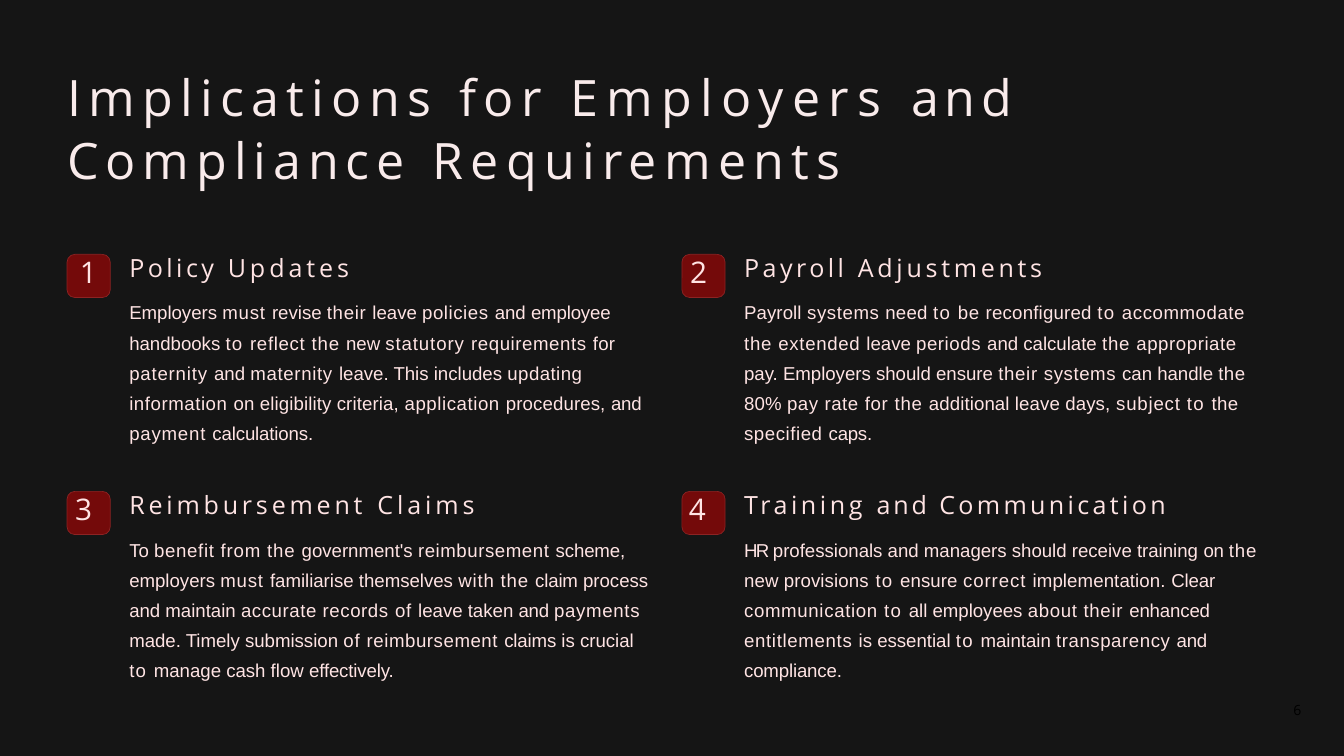
from pptx import Presentation
from pptx.dml.color import RGBColor
from pptx.enum.shapes import MSO_SHAPE
from pptx.enum.text import PP_ALIGN
from pptx.util import Pt

ROUNDED_RECTANGLE = MSO_SHAPE.ROUNDED_RECTANGLE
ALIGN_RIGHT = PP_ALIGN.RIGHT

BACKGROUND = RGBColor(0x15, 0x15, 0x15)
TITLE_COLOR = RGBColor(0xF9, 0xEB, 0xEB)
TEXT_COLOR = RGBColor(0xFF, 0xE4, 0xE4)
BADGE_FILL = RGBColor(0x74, 0x0A, 0x0A)
BADGE_LINE = RGBColor(0x8D, 0x23, 0x23)
BLACK = RGBColor(0, 0, 0)

HEADING_FONT = "Open Sans"
BODY_FONT = "Arial"

GRID_LEFT, GRID_TOP = 57.5, 218
COLUMN_STEP, ROW_STEP = 527, 203.2
BADGE_SIZE = 37
TOPIC_INDENT = 53.3
TOPIC_WIDTH, TOPIC_HEIGHT = 450, 167

# Every run is (text, letter spacing in points).
TITLE = [
    ("Implications ", 6.3), ("for ", 6.6), ("Employers ", 7.1), ("and ", 4.8),
    ("Compliance ", 6), ("Requirements", 6.3),
]

# Every topic is (offset of its number inside the badge, heading, body).
TOPICS = [
    (
        11,
        [("Policy ", 3), ("Updates", 3.4)],
        [
            ("Employers ", 0), ("must ", 0.7), ("revise ", 0), ("their ", 0.6),
            ("leave ", 0), ("policies ", 0.5), ("and ", 0), ("employee ", -0.1),
            ("handbooks ", 0), ("to ", 1.1), ("reflect", 0.6), (" the ", 0.7),
            ("new ", 0), ("statutory ", 0.8), ("requirements ", 0.5), ("for ", 0.3),
            ("paternity ", 0.7), ("and ", 0), ("maternity ", 0.6),
            ("leave. This includes ", 0), ("updating ", 0.4), ("information ", 0.5),
            ("on eligibility criteria, ", 0.1), ("application ", 0.5),
            ("procedures, ", 0.1), ("and ", -0.2), ("payment ", 0.7),
            ("calculations.", -0.1),
        ],
    ),
    (
        7,
        [("Payroll ", 3), ("Adjustments", 3.2)],
        [
            ("Payroll ", 0.1), ("systems ", 0.5), ("need ", 0.2), ("to ", 1.1),
            ("be ", 0.6), ("reconfigured ", 0.2), ("to ", 1.1), ("accommodate ", 0.5),
            ("the ", 0.7), ("extended ", 0.6), ("leave ", 0), ("periods ", 0.5),
            ("and calculate ", 0), ("the ", 0.7), ("appropriate ", 0.5),
            ("pay. Employers should ensure ", 0), ("their ", 0.6), ("systems ", 0.5),
            ("can handle ", 0), ("the ", 0.4), ("80% ", 0.1), ("pay rate ", 0.5),
            ("for ", 0.6), ("the ", 0.7), ("additional leave days, ", 0.1),
            ("subject ", 0.7), ("to ", 1.1), ("the ", 0.4), ("specified ", 0.5),
            ("caps.", -0.2),
        ],
    ),
    (
        7,
        [("Reimbursement ", 3.3), ("Claims", 3.4)],
        [
            ("To ", 0), ("benefit ", 0.6), ("from the ", 0.7), ("government's ", 0),
            ("reimbursement ", 0.5), ("scheme, ", -0.1), ("employers ", 0),
            ("must ", 0.7), ("familiarise themselves ", 0), ("with the ", 0.7),
            ("claim ", -0.1), ("process and maintain ", 0), ("accurate records ", 0.5),
            ("of ", 0.7), ("leave taken ", 0), ("and ", -0.2), ("payments ", 0.6),
            ("made. Timely submission ", 0), ("of ", 0.7), ("reimbursement ", 0.5),
            ("claims ", -0.1), ("is crucial ", 0), ("to ", 1.1),
            ("manage cash flow ", 0), ("effectively.", -0.1),
        ],
    ),
    (
        6,
        [("Training ", 3.1), ("and ", 2.5), ("Communication", 2.9)],
        [
            ("HR ", -1.4), ("professionals and managers should receive training ", 0),
            ("on ", -0.2), ("the ", 0.7), ("new provisions", 0.1), (" to ", 1.1),
            ("ensure ", 0.1), ("correct ", 0.8), ("implementation. ", 0.1),
            ("Clear ", -0.1), ("communication ", 0.6), ("to ", 1.1),
            ("all employees ", 0), ("about their ", 0.6), ("enhanced ", -0.1),
            ("entitlements ", 0.6), ("is essential ", 0), ("to ", 1.1),
            ("maintain ", 0), ("transparency ", 0.5), ("and ", -0.2),
            ("compliance.", -0.1),
        ],
    ),
]


def add_text_box(slide, left, top, width, height):
    """Add a wrapping text box without margins and return its text frame."""
    box = slide.shapes.add_textbox(Pt(left), Pt(top), Pt(width), Pt(height))
    frame = box.text_frame
    frame.word_wrap = True
    frame.margin_left = frame.margin_right = 0
    frame.margin_top = frame.margin_bottom = 0
    return frame


def add_runs(paragraph, runs, font_name, size, color):
    for text, spacing in runs:
        run = paragraph.add_run()
        run.text = text
        run.font.name = font_name
        run.font.size = Pt(size)
        run.font.color.rgb = color
        run.font._element.set("spc", str(round(spacing * 100)))


def add_title(slide):
    frame = add_text_box(slide, 57.5, 54.7, 1046, 147)
    paragraph = frame.paragraphs[0]
    paragraph.line_spacing = Pt(54)
    add_runs(paragraph, TITLE, HEADING_FONT, 43, TITLE_COLOR)


def add_badge(slide, left, top, number, number_offset):
    badge = slide.shapes.add_shape(
        ROUNDED_RECTANGLE, Pt(left), Pt(top), Pt(BADGE_SIZE), Pt(BADGE_SIZE)
    )
    badge.adjustments[0] = 0.18
    badge.shadow.inherit = False
    badge.fill.solid()
    badge.fill.fore_color.rgb = BADGE_FILL
    badge.line.color.rgb = BADGE_LINE
    badge.line.width = Pt(0.6)

    frame = add_text_box(slide, left + number_offset, top - 0.5, 26, 33)
    frame.paragraphs[0].space_before = Pt(0.9)
    add_runs(frame.paragraphs[0], [(str(number), 0)], HEADING_FONT, 25.5, TEXT_COLOR)


def add_topic(slide, left, top, heading, body):
    frame = add_text_box(slide, left, top, TOPIC_WIDTH, TOPIC_HEIGHT)
    heading_paragraph = frame.paragraphs[0]
    heading_paragraph.space_before = Pt(0.9)
    add_runs(heading_paragraph, heading, HEADING_FONT, 21.5, TEXT_COLOR)

    body_paragraph = frame.add_paragraph()
    body_paragraph.space_before = Pt(9.1)
    body_paragraph.line_spacing = 1.35
    add_runs(body_paragraph, body, BODY_FONT, 16, TEXT_COLOR)


def add_page_number(slide, number):
    frame = add_text_box(slide, 1075, 601, 40.5, 17)
    frame.paragraphs[0].alignment = ALIGN_RIGHT
    add_runs(frame.paragraphs[0], [(str(number), 0)], HEADING_FONT, 12, BLACK)


def main():
    presentation = Presentation()
    presentation.slide_width = Pt(1152)
    presentation.slide_height = Pt(648)
    slide = presentation.slides.add_slide(presentation.slide_layouts[6])
    slide.background.fill.solid()
    slide.background.fill.fore_color.rgb = BACKGROUND

    add_title(slide)
    for index, (number_offset, heading, body) in enumerate(TOPICS):
        row, column = divmod(index, 2)
        left = GRID_LEFT + column * COLUMN_STEP
        top = GRID_TOP + row * ROW_STEP
        add_badge(slide, left, top, index + 1, number_offset)
        add_topic(slide, left + TOPIC_INDENT, top - 1.3, heading, body)
    add_page_number(slide, 6)
    presentation.save("out.pptx")


if __name__ == "__main__":
    main()
